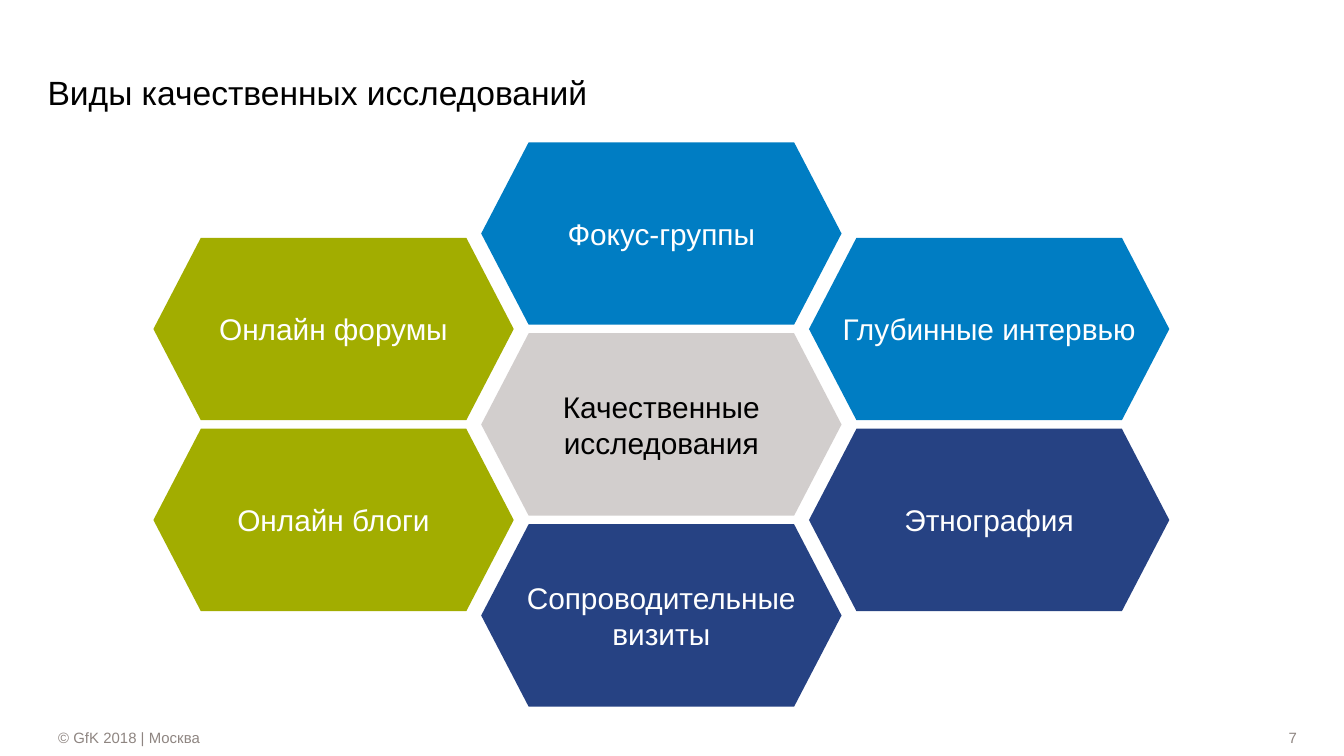
import pptx
import pptx.util
import pptx.dml.color
import pptx.enum.shapes
import pptx.enum.text

Cm = pptx.util.Cm
RGB = pptx.dml.color.RGBColor
ALIGN = pptx.enum.text.PP_ALIGN
ANCHOR = pptx.enum.text.MSO_ANCHOR

WHITE = RGB(0xFF, 0xFF, 0xFF)
BLACK = RGB(0, 0, 0)
BLUE = RGB(0x00, 0x7D, 0xC3)
NAVY = RGB(0x26, 0x42, 0x83)
OLIVE = RGB(0xA2, 0xAD, 0x00)
SILVER = RGB(0xD2, 0xCE, 0xCD)
GRAY = RGB(0x8E, 0x85, 0x81)

CELLS = [
    (1, 0, "Фокус-группы", BLUE, WHITE),
    (1, 2, "Качественные\nисследования", SILVER, BLACK),
    (1, 4, "Сопроводительные\nвизиты", NAVY, WHITE),
    (2, 3, "Этнография", NAVY, WHITE),
    (2, 1, "Глубинные интервью", BLUE, WHITE),
    (0, 1, "Онлайн форумы", OLIVE, WHITE),
    (0, 3, "Онлайн блоги", OLIVE, WHITE),
]


def write(frame, text, size, color, align):
    """Fill a text frame and format all its runs."""
    frame.text = text
    for para in frame.paragraphs:
        para.alignment = align
        for run in para.runs:
            run.font.name = "Arial"
            run.font.size = pptx.util.Pt(size)
            run.font.color.rgb = color


def label(slide, box, text, size, color, align=ALIGN.LEFT, anchor=ANCHOR.MIDDLE):
    """Place a text box without margins and return it."""
    shape = slide.shapes.add_textbox(*map(Cm, box))
    frame = shape.text_frame
    frame.word_wrap = True
    frame.vertical_anchor = anchor
    frame.margin_left = frame.margin_right = 0
    frame.margin_top = frame.margin_bottom = 0
    write(frame, text, size, color, align)
    return shape


def hexagon(slide, box, text, fill, color):
    """Draw one hexagon with a centred caption."""
    kind = pptx.enum.shapes.MSO_SHAPE.HEXAGON
    shape = slide.shapes.add_shape(kind, *map(Cm, box))
    shape.adjustments[0] = 0.26
    shape.shadow.inherit = False
    shape.fill.solid()
    shape.fill.fore_color.rgb = fill
    shape.line.fill.background()
    frame = shape.text_frame
    frame.word_wrap = False
    frame.vertical_anchor = ANCHOR.MIDDLE
    write(frame, text, 16, color, ALIGN.CENTER)


def comb(slide, box):
    """Lay the hexagons out in three columns, stepping by half a row."""
    left, top, width, height = box
    wide, tall = 6.81, 3.45
    across = (width - wide) / 2
    down = (height - tall) / 4
    for col, row, text, fill, color in CELLS:
        place = (left + col * across, top + row * down, wide, tall)
        hexagon(slide, place, text, fill, color)


def footer(slide, box):
    """Place the copyright line and the page number."""
    left, top, width, height = box
    page = 3.6
    note = (left, top, width - page - 0.2, height)
    num = (left + width - page, top, page, height)
    parts = [
        label(slide, num, "7", 8, GRAY, ALIGN.RIGHT),
        label(slide, note, "© GfK 2018 | Москва", 8, GRAY),
    ]
    for part in parts:
        part.fill.solid()
        part.fill.fore_color.rgb = WHITE


def main():
    """Build and save the slide."""
    deck = pptx.Presentation()
    deck.slide_width = Cm(25.4)
    deck.slide_height = Cm(14.29)
    slide = deck.slides.add_slide(deck.slide_layouts[6])
    footer(slide, (1.1, 13.74, 23.41, 0.41))
    title = "Виды качественных исследований"
    label(slide, (0.9, 0.53, 17.8, 1.6), title, 18, BLACK, anchor=ANCHOR.BOTTOM)
    comb(slide, (2.9, 2.69, 19.2, 10.67))
    deck.save("out.pptx")


if __name__ == "__main__":
    main()
